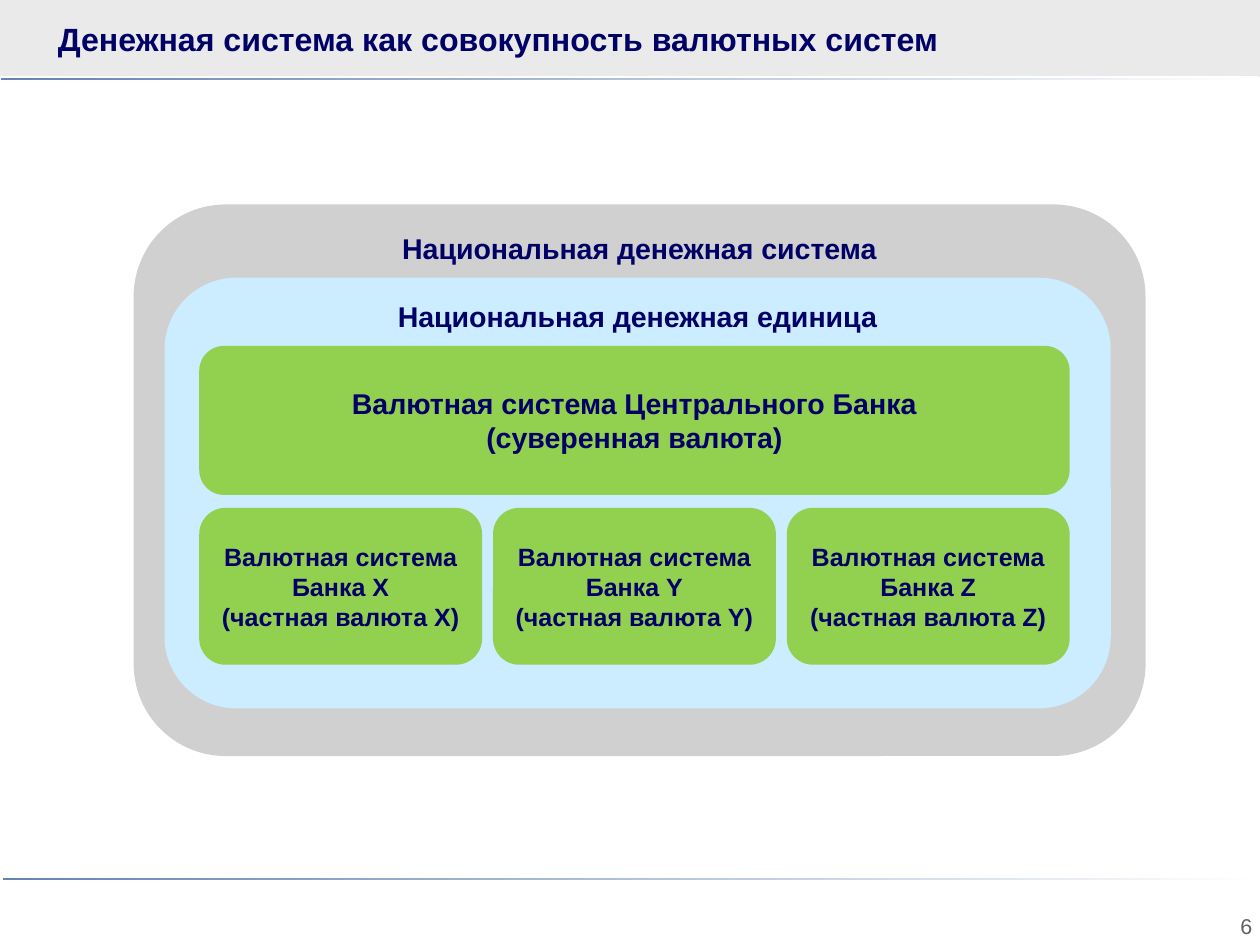
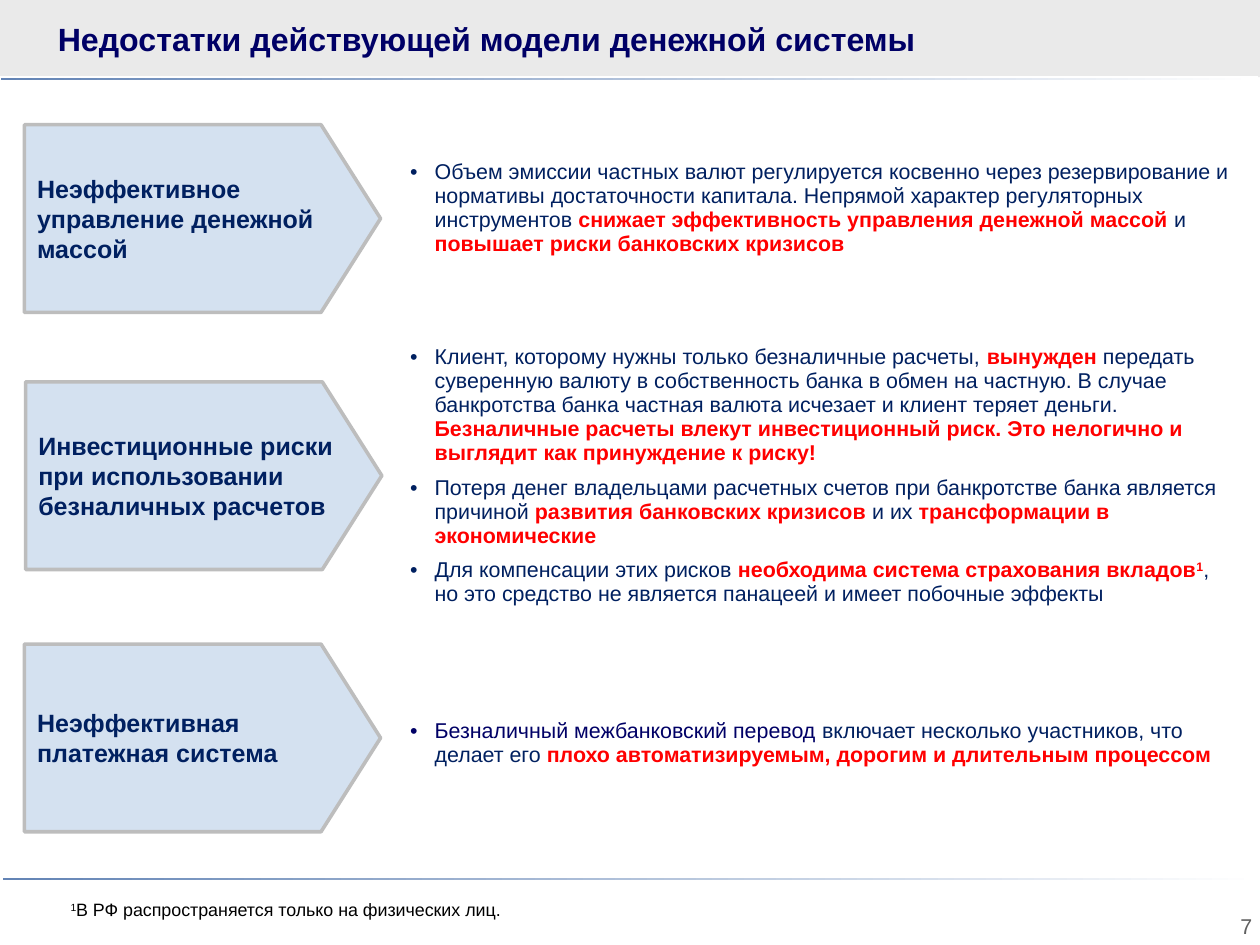
from lxml.etree import SubElement
from pptx import Presentation
from pptx.dml.color import RGBColor
from pptx.enum.shapes import MSO_SHAPE as Shape
from pptx.enum.text import MSO_ANCHOR as Anchor, PP_ALIGN as Align
from pptx.oxml.ns import qn
from pptx.util import Inches, Pt

FONT = "Arial"
WHITE = RGBColor(0xFF, 0xFF, 0xFF)
BLACK = RGBColor(0, 0, 0)
BAND = RGBColor(0xEA, 0xEA, 0xEA)
RULE = RGBColor(0x63, 0x84, 0xB5)
NAVY = RGBColor(0x00, 0x00, 0x66)
INK = RGBColor(0x00, 0x20, 0x60)
RED = RGBColor(0xFF, 0, 0)
GREY = RGBColor(0xD0, 0xD0, 0xD0)
SKY = RGBColor(0xCC, 0xEC, 0xFF)
GREEN = RGBColor(0x92, 0xD0, 0x50)
PALE = RGBColor(0xD4, 0xE1, 0xF0)
EDGE = RGBColor(0xBD, 0xBD, 0xBD)
PAGE = RGBColor(0x60, 0x60, 0x60)

HOT = {"color": RED, "bold": True}
SUP = {"raised": True}

SYSTEM_TITLE = "Денежная система как совокупность валютных систем"
LAYERS = [
    ("Национальная денежная система", GREY, (1.04, 1.59, 7.87, 4.29)),
    ("Национальная денежная единица", SKY, (1.28, 2.16, 7.36, 3.35)),
]
CENTRAL = ["Валютная система Центрального Банка", "(суверенная валюта)"]
BANKS = ["X", "Y", "Z"]

FLAW_TITLE = "Недостатки действующей модели денежной системы"
FLAWS = [
    ("Неэффективное управление денежной массой", (0.19, 0.97), 1.34, [
        [("Объем эмиссии частных валют регулируется косвенно через резервирование и "
          "нормативы достаточности капитала. Непрямой характер регуляторных инструментов ", {}),
         ("снижает эффективность управления денежной массой", HOT),
         (" и ", {}),
         ("повышает риски банковских кризисов", HOT)],
    ]),
    ("Инвестиционные риски при использовании безналичных расчетов", (0.2, 2.97), 2.82, [
        [("Клиент, которому нужны только безналичные расчеты, ", {}),
         ("вынужден", HOT),
         (" передать суверенную валюту в собственность банка в обмен на частную. В случае "
          "банкротства банка частная валюта исчезает и клиент теряет деньги. ", {}),
         ("Безналичные расчеты влекут инвестиционный риск. Это нелогично и "
          "выглядит как принуждение к риску!", HOT)],
        [("Потеря денег владельцами расчетных счетов при банкротстве банка "
          "является причиной ", {}),
         ("развития банковских кризисов", HOT),
         (" и их", {}),
         (" трансформации в экономические", HOT)],
        [("Для компенсации этих рисков ", {}),
         ("необходима система страхования вкладов", HOT),
         ("1", HOT | SUP),
         (", но это средство не является панацеей и имеет побочные эффекты", {})],
    ]),
    ("Неэффективная платежная система", (0.19, 5.01), 1.34, [
        [("Безналичный межбанковский перевод ", {"color": NAVY}),
         ("включает несколько участников, что делает его ", {}),
         ("плохо автоматизируемым, дорогим и длительным процессом", HOT)],
    ]),
]
NOTE = [("1", SUP), ("В РФ распространяется только на физических лиц.", {})]


def pad(body, inset):
    (body.margin_left, body.margin_top,
     body.margin_right, body.margin_bottom) = map(Inches, inset)


def write(host, paras, size=12, color=NAVY, bold=False, align=Align.LEFT,
          anchor=Anchor.TOP, inset=(0.1, 0.05, 0.1, 0.05), bullet=False):
    frame = host.text_frame
    body = host if hasattr(host, "margin_left") else frame
    if body is frame:
        frame.word_wrap = True
    body.vertical_anchor = anchor
    pad(body, inset)
    for i, runs in enumerate(paras):
        para = frame.add_paragraph() if i else frame.paragraphs[0]
        para.alignment = align
        if bullet:
            props = para._p.get_or_add_pPr()
            props.set("marL", str(Inches(0.19)))
            props.set("indent", str(-Inches(0.19)))
            SubElement(props, qn("a:buFont")).set("typeface", FONT)
            SubElement(props, qn("a:buChar")).set("char", "•")
            if i:
                para.space_before = Pt(6)
        for text, style in [(runs, {})] if isinstance(runs, str) else runs:
            run = para.add_run()
            run.text = text
            font = run.font
            font.name, font.size = FONT, Pt(size)
            font.bold = style.get("bold", bold)
            font.color.rgb = style.get("color", color)
            if style.get("raised"):
                run._r.get_or_add_rPr().set("baseline", "30000")


def draw(slide, kind, at, fill):
    shape = slide.shapes.add_shape(kind, *map(Inches, at))
    shape.shadow.inherit = False
    shape.line.fill.background()
    shape.fill.solid()
    shape.fill.fore_color.rgb = fill
    return shape


def grid(slide, rows, at):
    table = slide.shapes.add_table(rows, 1, *map(Inches, at)).table
    table.first_row = table.horz_banding = False
    return table


def rule(slide, left, top):
    cell = grid(slide, 1, (left, top, 9.78, 0.03)).cell(0, 0)
    pad(cell, (0, 0, 0, 0))
    end = SubElement(cell.text_frame.paragraphs[0]._p, qn("a:endParaRPr"))
    end.set("sz", "100")
    cell.fill.gradient()
    cell.fill.gradient_angle = 0
    for stop, tone in zip(cell.fill.gradient_stops, (RULE, WHITE)):
        stop.color.rgb = tone


def label(slide, at, paras, **style):
    write(slide.shapes.add_textbox(*map(Inches, at)), paras, **style)


def start(deck, title, page):
    slide = deck.slides.add_slide(deck.slide_layouts[6])
    draw(slide, Shape.RECTANGLE, (0, 0, 9.8, 0.6), BAND)
    label(slide, (8.43, 7.1, 1.31, 0.2), [str(page)], color=PAGE,
          align=Align.RIGHT, inset=(0, 0, 0, 0))
    rule(slide, 0, 0.6)
    rule(slide, 0.02, 6.82)
    label(slide, (0.25, 0, 8.4, 0.6), [title], size=18, bold=True,
          anchor=Anchor.MIDDLE, inset=(0.2, 0.04, 0, 0.04))
    return slide


def show_system(deck):
    slide = start(deck, SYSTEM_TITLE, 6)
    mid = {"bold": True, "align": Align.CENTER}
    for text, fill, at in LAYERS:
        box = draw(slide, Shape.ROUNDED_RECTANGLE, at, fill)
        write(box, [text], size=16, inset=(0.1, 0, 0.1, 0), **mid)
    left, span, wide = 1.55, 6.77, 2.2
    box = draw(slide, Shape.ROUNDED_RECTANGLE, (left, 2.69, span, 1.16), GREEN)
    write(box, CENTRAL, size=16, anchor=Anchor.MIDDLE, **mid)
    step = (span - wide) / (len(BANKS) - 1)
    for i, bank in enumerate(BANKS):
        box = draw(slide, Shape.ROUNDED_RECTANGLE,
                   (left + i * step, 3.95, wide, 1.22), GREEN)
        write(box, [f"Валютная система Банка {bank}", f"(частная валюта {bank})"],
              size=14, anchor=Anchor.MIDDLE, inset=(0, 0.05, 0, 0.05), **mid)


def show_flaws(deck):
    slide = start(deck, FLAW_TITLE, 7)
    label(slide, (0.45, 6.94, 8.82, 0.28), [NOTE], size=10, color=BLACK)
    table = grid(slide, len(FLAWS), (3.09, 0.95, 6.61, 5.5))
    for i, (name, spot, high, points) in enumerate(FLAWS):
        arrow = draw(slide, Shape.PENTAGON, (*spot, 2.77, 1.46), PALE)
        arrow.adjustments[0] = 0.317
        arrow.line.color.rgb = EDGE
        arrow.line.width = Pt(2)
        write(arrow, [name], size=14, color=INK, bold=True, anchor=Anchor.MIDDLE)
        table.rows[i].height = Inches(high)
        cell = table.cell(i, 0)
        cell.fill.solid()
        cell.fill.fore_color.rgb = WHITE
        write(cell, points, color=INK, anchor=Anchor.MIDDLE, bullet=True)


def main():
    deck = Presentation()
    deck.slide_width, deck.slide_height = Inches(9.8), Inches(7.35)
    show_system(deck)
    show_flaws(deck)
    deck.save("out.pptx")


if __name__ == "__main__":
    main()
